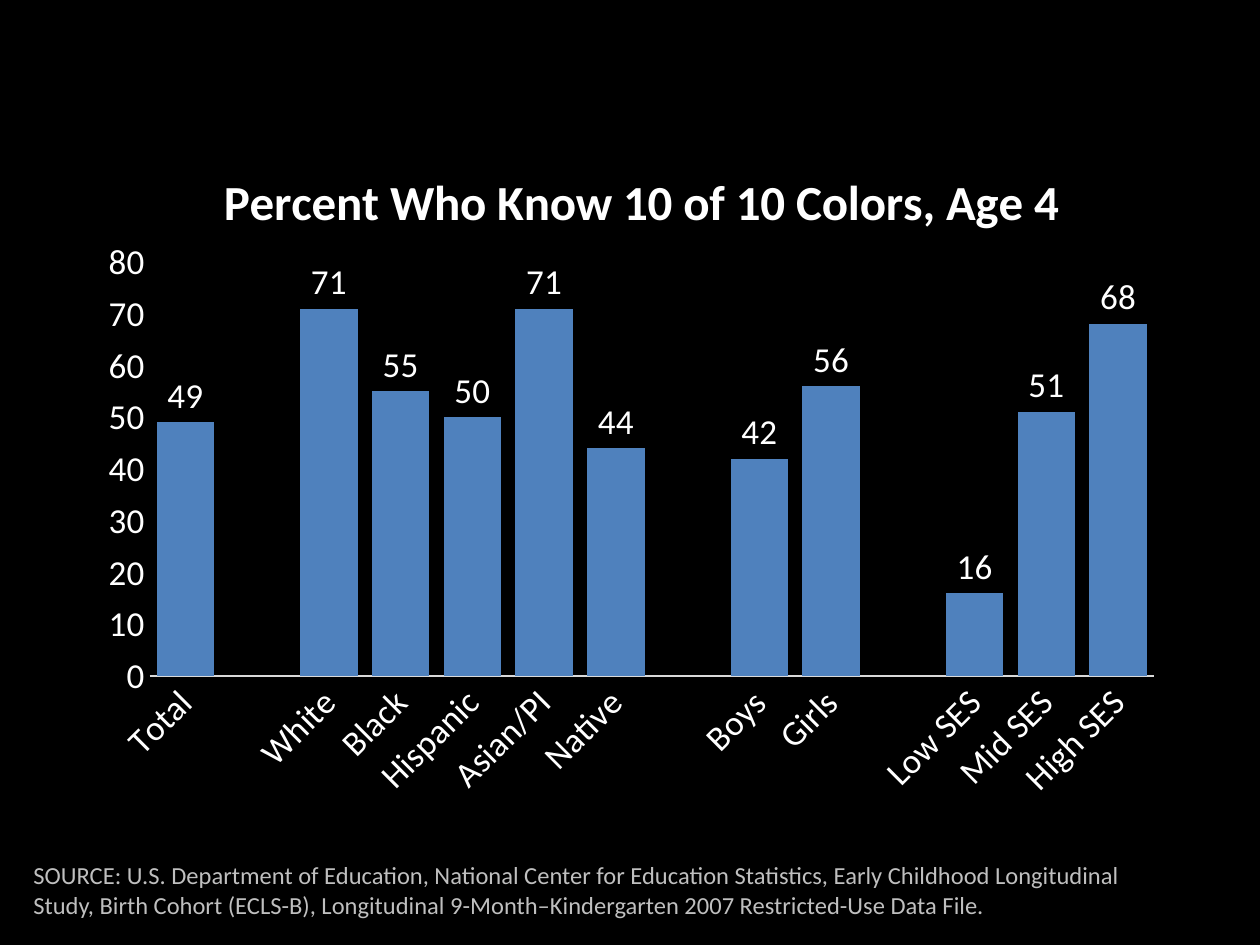
from lxml import etree
from pptx import Presentation
from pptx.chart.data import CategoryChartData as ChartData
from pptx.dml.color import RGBColor as Color
from pptx.enum.chart import XL_CHART_TYPE as Kind
from pptx.enum.chart import XL_LABEL_POSITION as Spot
from pptx.enum.chart import XL_TICK_MARK as Tick
from pptx.oxml.ns import qn
from pptx.util import Pt

FONT = "Calibri"
HUES = {"back": "000000", "text": "FFFFFF", "bar": "4F81BD",
        "line": "D9D9D9", "note": "BFBFBF"}
TITLE = "Percent Who Know 10 of 10 Colors, Age 4"
# Unnamed rows are the gaps between groups
ROWS = [("Total", 49), ("", None),
        ("White", 71), ("Black", 55), ("Hispanic", 50),
        ("Asian/PI", 71), ("Native", 44), ("", None),
        ("Boys", 42), ("Girls", 56), ("", None),
        ("Low SES", 16), ("Mid SES", 51), ("High SES", 68)]
NOTE = ("SOURCE: U.S. Department of Education, National Center for Education "
        "Statistics, Early Childhood Longitudinal Study, Birth Cohort (ECLS-B), "
        "Longitudinal 9-Month–Kindergarten 2007 Restricted-Use Data File.")


def hue(name):
    return Color.from_string(HUES[name])


def style(font, size, name="text", bold=False):
    font.name, font.size, font.bold = FONT, Pt(size), bold
    font.color.rgb = hue(name)


def place(node, index, **spots):
    """Give a chart part a fixed place, in shares of the chart."""
    for old in node.findall(qn("c:layout")):
        node.remove(old)
    layout = etree.Element(qn("c:layout"))
    manual = etree.SubElement(layout, qn("c:manualLayout"))
    for tag, val in spots.items():
        etree.SubElement(manual, qn("c:" + tag)).set("val", str(val))
    node.insert(index, layout)


def add_bars(slide):
    data = ChartData()
    data.categories = [name for name, _ in ROWS]
    data.add_series("Series 1", [val for _, val in ROWS])
    chart = slide.shapes.add_chart(
        Kind.COLUMN_CLUSTERED, Pt(48), Pt(76), Pt(624), Pt(388), data).chart
    chart.has_legend = False
    style(chart.font, 20)

    # Title
    chart.has_title = True
    title = chart.chart_title
    run = title.text_frame.paragraphs[0].add_run()
    run.text = TITLE
    style(run.font, 28, bold=True)
    place(title._element, 1, xMode="edge", yMode="edge", x=0.12, y=0.04)

    # Axes
    across, up = chart.category_axis, chart.value_axis
    for axis in (across, up):
        axis.major_tick_mark = axis.minor_tick_mark = Tick.NONE
        axis.has_major_gridlines = False
        style(axis.tick_labels.font, 20)
    across.format.line.color.rgb = hue("line")
    across.format.line.width = Pt(0.75)
    across._element.find(qn("c:txPr")).find(qn("a:bodyPr")).set("rot", "-2700000")
    up.format.line.fill.background()
    up.minimum_scale, up.maximum_scale, up.major_unit = 0, 80, 10

    # Bars and labels
    plot = chart.plots[0]
    plot.gap_width = 25
    plot.vary_by_categories = False
    bars = plot.series[0]
    bars.format.fill.solid()
    bars.format.fill.fore_color.rgb = hue("bar")
    labels = bars.data_labels
    labels.show_value = True
    labels.number_format, labels.number_format_is_linked = "#,##0", False
    labels.position = Spot.OUTSIDE_END
    style(labels.font, 20)
    area = chart._chartSpace.find(qn("c:chart")).find(qn("c:plotArea"))
    place(area, 0, layoutTarget="inner", xMode="edge", yMode="edge",
          x=0.06, y=0.19, w=0.92, h=0.61)


def add_note(slide):
    frame = slide.shapes.add_textbox(Pt(12), Pt(488), Pt(648), Pt(41)).text_frame
    frame.word_wrap = True
    run = frame.paragraphs[0].add_run()
    run.text = NOTE
    style(run.font, 14, "note")


def main():
    deck = Presentation()
    deck.slide_width, deck.slide_height = Pt(720), Pt(540)
    slide = deck.slides.add_slide(deck.slide_layouts[6])
    slide.background.fill.solid()
    slide.background.fill.fore_color.rgb = hue("back")
    add_bars(slide)
    add_note(slide)
    deck.save("out.pptx")


if __name__ == "__main__":
    main()
